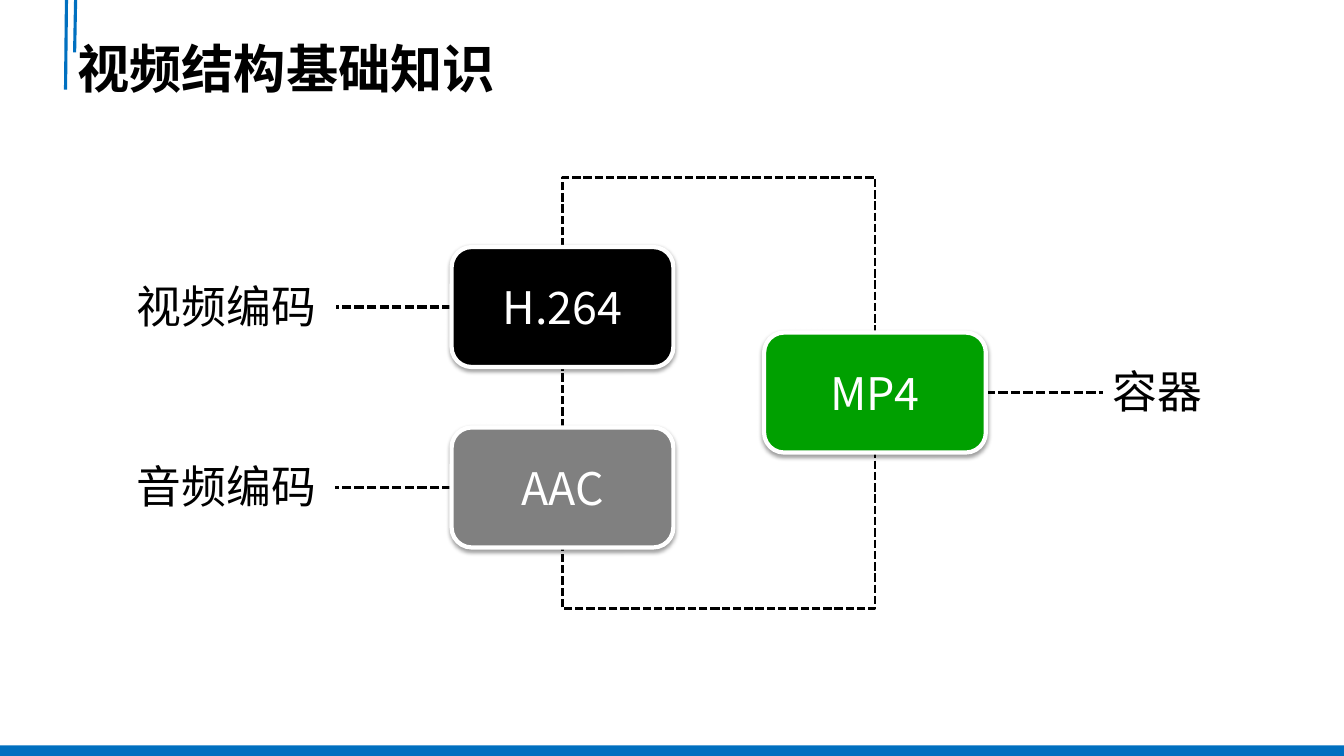
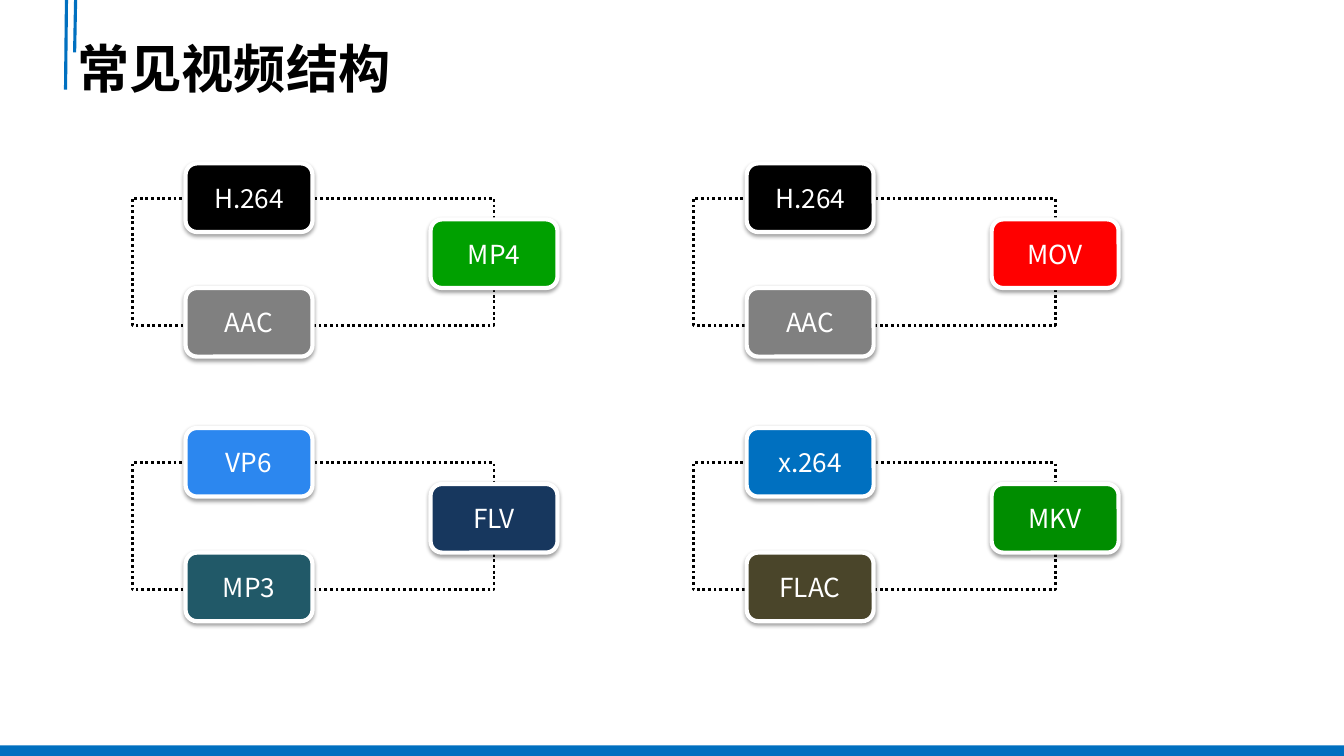
from dataclasses import dataclass

from lxml import etree
from pptx import Presentation
from pptx import util as u
from pptx.dml.color import RGBColor
from pptx.enum import dml, shapes, text
from pptx.oxml.ns import qn


@dataclass(frozen=True)
class Theme:
    font: str = "Noto Sans CJK SC"
    title_size: float = 37.3
    large_size: float = 32
    small_size: float = 18.7
    ink: str = "000000"
    paper: str = "FFFFFF"
    accent: str = "0070C0"
    grey: str = "808080"
    green: str = "00A000"
    dark_green: str = "008D00"
    red: str = "FF0000"
    sky: str = "2C87EF"
    navy: str = "17375E"
    teal: str = "215968"
    olive: str = "4A452A"


THEME = Theme()
DASH = dml.MSO_LINE.SQUARE_DOT
DOT = dml.MSO_LINE.ROUND_DOT


def style_text(frame, size, color, align, bold=False):
    for paragraph in frame.paragraphs:
        paragraph.alignment = align
        for run in paragraph.runs:
            run.font.size = u.Pt(size)
            run.font.bold = bold
            run.font.color.rgb = RGBColor.from_string(color)
            run.font.name = THEME.font
            properties = run._r.get_or_add_rPr()
            etree.SubElement(properties, qn("a:ea"), typeface=THEME.font)


def add_line(parent, start, end, color, width=2.25, dash=None):
    line = parent.shapes.add_connector(
        shapes.MSO_CONNECTOR.STRAIGHT, *map(u.Pt, (*start, *end)))
    line.line.color.rgb = RGBColor.from_string(color)
    line.line.width = u.Pt(width)
    if dash:
        line.line.dash_style = dash
    etree.SubElement(line.element.spPr, qn("a:effectLst"))
    return line


def add_panel(parent, kind, box, fill, outline=None, width=2, dash=None):
    panel = parent.shapes.add_shape(kind, *map(u.Pt, box))
    panel.shadow.inherit = False
    panel.fill.solid()
    panel.fill.fore_color.rgb = RGBColor.from_string(fill)
    if outline:
        panel.line.color.rgb = RGBColor.from_string(outline)
        panel.line.width = u.Pt(width)
        panel.line.dash_style = dash
    else:
        panel.line.fill.background()
    return panel


def add_shadow(panel):
    effects = panel.element.spPr.find(qn("a:effectLst"))
    shadow = etree.SubElement(
        effects, qn("a:outerShdw"), blurRad=str(u.Pt(3.1)),
        dist=str(u.Pt(1.6)), dir="5400000", rotWithShape="0")
    color = etree.SubElement(shadow, qn("a:srgbClr"), val=THEME.ink)
    etree.SubElement(color, qn("a:alpha"), val="38000")


def add_block(parent, name, fill, center, size, font_size):
    """Add a rounded, shadowed block around a centre point."""
    (x, y), (width, height) = center, size
    block = add_panel(parent, shapes.MSO_SHAPE.ROUNDED_RECTANGLE,
                      (x - width / 2, y - height / 2, width, height),
                      fill, THEME.paper, 3)
    add_shadow(block)
    block.text_frame.text = name
    block.text_frame.vertical_anchor = text.MSO_ANCHOR.MIDDLE
    style_text(block.text_frame, font_size, THEME.paper, text.PP_ALIGN.CENTER)


def add_frame(parent, box, dash):
    add_panel(parent, shapes.MSO_SHAPE.RECTANGLE, box,
              THEME.paper, THEME.ink, 2, dash)


def add_label(parent, wording, left, middle, width):
    height = 46
    label = parent.shapes.add_textbox(
        *map(u.Pt, (left, middle - 24, width, height)))
    label.text_frame.text = wording
    label.text_frame.word_wrap = False
    label.text_frame.auto_size = text.MSO_AUTO_SIZE.SHAPE_TO_FIT_TEXT
    style_text(label.text_frame, THEME.large_size, THEME.ink,
               text.PP_ALIGN.LEFT)


def add_slide(deck, layout, title):
    slide = deck.slides.add_slide(layout)
    heading = slide.shapes.title.text_frame
    heading.text = title
    heading.vertical_anchor = text.MSO_ANCHOR.MIDDLE
    heading.auto_size = text.MSO_AUTO_SIZE.NONE
    style_text(heading, THEME.title_size, THEME.ink, text.PP_ALIGN.LEFT, True)
    return slide


def place_title(layout):
    heading = layout.placeholders[0]
    heading.left, heading.top = u.Pt(48), u.Pt(21.6)
    heading.width, heading.height = u.Pt(864), u.Pt(53.3)


def decorate_layout(layout, slide):
    """Draw the bars and the bottom band, then hand them to the layout."""
    decorations = [
        add_line(slide, (47.5, 0), (46.8, 64), THEME.accent),
        add_line(slide, (54, 0), (53.3, 37.4), THEME.accent),
        add_panel(slide, shapes.MSO_SHAPE.RECTANGLE,
                  (0, 532.5, 960, 7.5), THEME.accent),
    ]
    for index, decoration in enumerate(decorations):
        decoration.element.xpath(".//p:cNvPr")[0].set("id", str(101 + index))
        layout.shapes.element.insert(2 + index, decoration.element)


def add_anatomy(slide):
    """Show the two codecs inside their container, with labels."""
    diagram = slide.shapes.add_group_shape()
    block_size = (158.4, 85.7)
    left, top, width, height = 401.8, 126.7, 223.2, 308.2
    right = left + width
    reach = block_size[0] / 2
    # name, fill, centre x, centre y, label, label left, label width, line end
    parts = [
        ("H.264", THEME.ink, left, 219.3, "视频编码", 90.7, 144, 240),
        ("AAC", THEME.grey, left, 348.2, "音频编码", 90.7, 144, 239.5),
        ("MP4", THEME.green, right, 280.4, "容器", 787.7, 79.2, 787.7),
    ]
    add_frame(diagram, (left, top, width, height), DASH)
    for name, fill, x, y, wording, label_left, label_width, line_end in parts:
        edge = x + reach if line_end > x else x - reach
        add_line(diagram, (edge, y), (line_end, y), THEME.ink, dash=DASH)
        add_block(diagram, name, fill, (x, y), block_size, THEME.large_size)
        add_label(diagram, wording, label_left, y, label_width)


def add_structure(slide, left, top, video, audio, container):
    """Show one container with its video and audio codecs."""
    diagram = slide.shapes.add_group_shape()
    width, height = 258.5, 90.7
    add_frame(diagram, (left, top, width, height), DOT)
    centers = [(83.5, -0.4), (83.5, 88.6), (width, 39.6)]
    for (name, fill), (x, y) in zip((video, audio, container), centers):
        add_block(diagram, name, fill, (left + x, top + y), (90.7, 49),
                  THEME.small_size)


def main():
    deck = Presentation()
    deck.slide_width, deck.slide_height = u.Pt(960), u.Pt(540)
    layout = deck.slide_layouts.get_by_name("Title Only")
    place_title(layout)

    basics = add_slide(deck, layout, "视频结构基础知识")
    decorate_layout(layout, basics)
    add_anatomy(basics)

    common = add_slide(deck, layout, "常见视频结构")
    h264, aac = ("H.264", THEME.ink), ("AAC", THEME.grey)
    structures = [
        (h264, aac, ("MP4", THEME.green)),
        (h264, aac, ("MOV", THEME.red)),
        (("VP6", THEME.sky), ("MP3", THEME.teal), ("FLV", THEME.navy)),
        (("x.264", THEME.accent), ("FLAC", THEME.olive),
         ("MKV", THEME.dark_green)),
    ]
    for index, structure in enumerate(structures):
        row, column = divmod(index, 2)
        add_structure(common, 94.4 + 400.8 * column, 141.6 + 189 * row,
                      *structure)

    deck.save("out.pptx")


if __name__ == "__main__":
    main()
